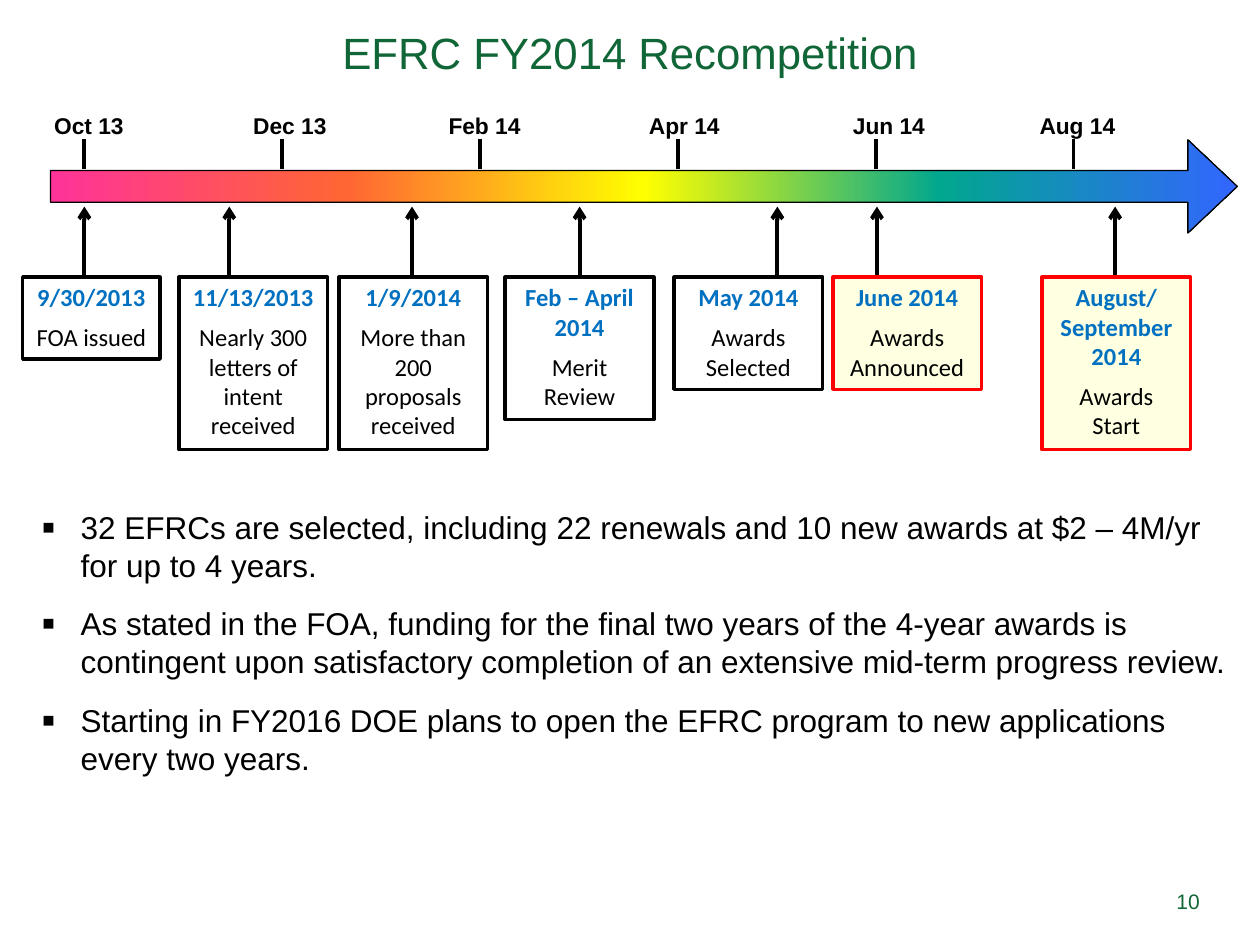
from lxml.etree import SubElement
from pptx import Presentation
from pptx.dml.color import RGBColor
from pptx.enum.shapes import MSO_CONNECTOR as Connector, MSO_SHAPE as Shape
from pptx.enum.text import MSO_ANCHOR as Anchor, MSO_AUTO_SIZE as AutoSize, PP_ALIGN as Align
from pptx.oxml.ns import qn
from pptx.util import Inches, Pt

GREEN, BLUE, BLACK, WHITE = "106636", "0070C0", "000000", "FFFFFF"
RED, CREAM = "FF0000", "FFFFE1"
RAINBOW = ["FF3399", "FF6633", "FFFF00", "01A78F", "3366FF"]
BOX_TOP, BOX_WIDTH = 2.2, 1.18

# label, left, width
MONTHS = [
    ("Oct 13", 0.34, 0.74), ("Dec 13", 1.92, 0.77), ("Feb 14", 3.47, 0.76),
    ("Apr 14", 5.06, 0.75), ("Jun 14", 6.68, 0.76), ("Aug 14", 8.16, 0.79),
]
# date, event, left, width, height, arrow position, highlighted
MILESTONES = [
    ("9/30/2013", "FOA issued", 0.18, 1.09, 0.65, 0.67, False),
    ("11/13/2013", "Nearly 300 letters of intent received", 1.42, BOX_WIDTH, 1.37, 1.82, False),
    ("1/9/2014", "More than 200 proposals received", 2.69, BOX_WIDTH, 1.37, 3.27, False),
    ("Feb – April 2014", "Merit Review", 4.01, BOX_WIDTH, 1.13, 4.6, False),
    ("May 2014", "Awards Selected", 5.35, BOX_WIDTH, 0.89, 6.17, False),
    ("June 2014", "Awards Announced", 6.61, BOX_WIDTH, 0.89, 6.96, True),
    ("August/ September 2014", "Awards Start", 8.27, BOX_WIDTH, 1.37, 8.85, True),
]
BULLETS = [
    "32 EFRCs are selected, including 22 renewals and 10 new awards at $2 – 4M/yr for up to 4 years.",
    "As stated in the FOA, funding for the final two years of the 4-year awards is contingent upon "
    "satisfactory completion of an extensive mid-term progress review.",
    "Starting in FY2016 DOE plans to open the EFRC program to new applications every two years.",
]


def color(hex_code):
    return RGBColor.from_string(hex_code)


def write(para, text, size=18, font="Arial", hex_code=BLACK, bold=False,
          align=Align.LEFT, before=0, after=0):
    para.alignment = align
    para.space_before, para.space_after = Pt(before), Pt(after)
    span = para.add_run()
    span.text = text
    span.font.size, span.font.name, span.font.bold = Pt(size), font, bold
    span.font.color.rgb = color(hex_code)


def place(shape, left, top, width, height):
    shape.left, shape.top = Inches(left), Inches(top)
    shape.width, shape.height = Inches(width), Inches(height)


def set_frame(shape, side=0.1, edge=0.05, wrap=True, anchor=Anchor.TOP, fit=AutoSize.NONE):
    frame = shape.text_frame
    frame.margin_left = frame.margin_right = Inches(side)
    frame.margin_top = frame.margin_bottom = Inches(edge)
    frame.word_wrap, frame.vertical_anchor, frame.auto_size = wrap, anchor, fit
    return frame


def add_line(page, x, bottom, top, arrow=False):
    """Draw a vertical line upwards, with an optional arrowhead at its top."""
    line = page.shapes.add_connector(
        Connector.STRAIGHT, Inches(x), Inches(bottom), Inches(x), Inches(top))
    line.line.color.rgb = color(BLACK)
    line.line.width = Pt(2.25)
    if arrow:
        SubElement(line.line._get_or_add_ln(), qn("a:tailEnd"), type="arrow")
    SubElement(line._element.spPr, qn("a:effectLst"))


def add_outlined(page, kind, area, line_color, line_width):
    shape = page.shapes.add_shape(kind, *map(Inches, area))
    shape.shadow.inherit = False
    shape.line.color.rgb = color(line_color)
    shape.line.width = Pt(line_width)
    return shape


def add_milestone(page, date, event, left, width, height, arrow_x, highlighted):
    add_line(page, arrow_x, 2.19, 1.64, arrow=True)
    box = add_outlined(page, Shape.RECTANGLE, (left, BOX_TOP, width, height),
                       RED if highlighted else BLACK, 2)
    box.fill.solid()
    box.fill.fore_color.rgb = color(CREAM if highlighted else WHITE)
    frame = set_frame(box, 0.09, 0.04, wrap=width == BOX_WIDTH, fit=AutoSize.SHAPE_TO_FIT_TEXT)
    style = dict(size=14, font="Calibri", align=Align.CENTER)
    write(frame.paragraphs[0], date, hex_code=BLUE, bold=True, **style)
    write(frame.add_paragraph(), event, before=6, **style)


def add_month(page, label, left, width, tick_x):
    add_line(page, tick_x, 1.34, 1.1)
    box = page.shapes.add_textbox(*map(Inches, (left, 0.85, width, 0.31)))
    frame = set_frame(box, 0.09, 0.04, wrap=False, fit=AutoSize.SHAPE_TO_FIT_TEXT)
    write(frame.paragraphs[0], label, size=13, bold=True)


def add_time_arrow(page):
    arrow = add_outlined(page, Shape.RIGHT_ARROW, (0.4, 1.11, 9.42, 0.74), BLACK, 0.75)
    arrow.adjustments[0], arrow.adjustments[1] = 0.34, 0.53
    arrow.fill.gradient()
    arrow.fill.gradient_angle = 0
    stops = arrow._element.spPr.find(qn("a:gradFill")).find(qn("a:gsLst"))
    for stop in list(stops):
        stops.remove(stop)
    for index, hex_code in enumerate(RAINBOW):
        stop = SubElement(stops, qn("a:gs"), pos=str(index * 25000))
        SubElement(stop, qn("a:srgbClr"), val=hex_code)


def add_bullet(para, text):
    write(para, text, after=12)
    props = para._p.get_or_add_pPr()
    props.set("marL", str(Inches(0.31)))
    props.set("indent", str(Inches(-0.31)))
    SubElement(props, qn("a:buSzPct"), val="125000")
    SubElement(props, qn("a:buChar"), char="▪")


def fill_title(title):
    place(title, 0, 0, 10, 0.83)
    frame = set_frame(title, anchor=Anchor.MIDDLE)
    write(frame.paragraphs[0], "EFRC FY2014 Recompetition", size=25, hex_code=GREEN,
          align=Align.CENTER)


def fill_body(body):
    place(body, 0.23, 3.98, 9.69, 3.93)
    frame = set_frame(body)
    for index, text in enumerate(BULLETS):
        add_bullet(frame.add_paragraph() if index else frame.paragraphs[0], text)


def add_page_number(page):
    box = page.shapes.add_textbox(*map(Inches, (9.1, 6.95, 0.52, 0.4)))
    frame = set_frame(box, anchor=Anchor.MIDDLE)
    write(frame.paragraphs[0], "10", size=12, hex_code=GREEN, align=Align.RIGHT)


def main():
    deck = Presentation()
    deck.slide_width, deck.slide_height = Inches(10), Inches(7.5)
    page = deck.slides.add_slide(deck.slide_layouts[1])
    fill_title(page.shapes.title)
    fill_body(page.placeholders[1])
    for milestone in MILESTONES:
        add_milestone(page, *milestone)
    for index, month in enumerate(MONTHS):
        add_month(page, *month, tick_x=0.67 + 1.57 * index)
    add_time_arrow(page)
    add_page_number(page)
    deck.save("out.pptx")


if __name__ == "__main__":
    main()
